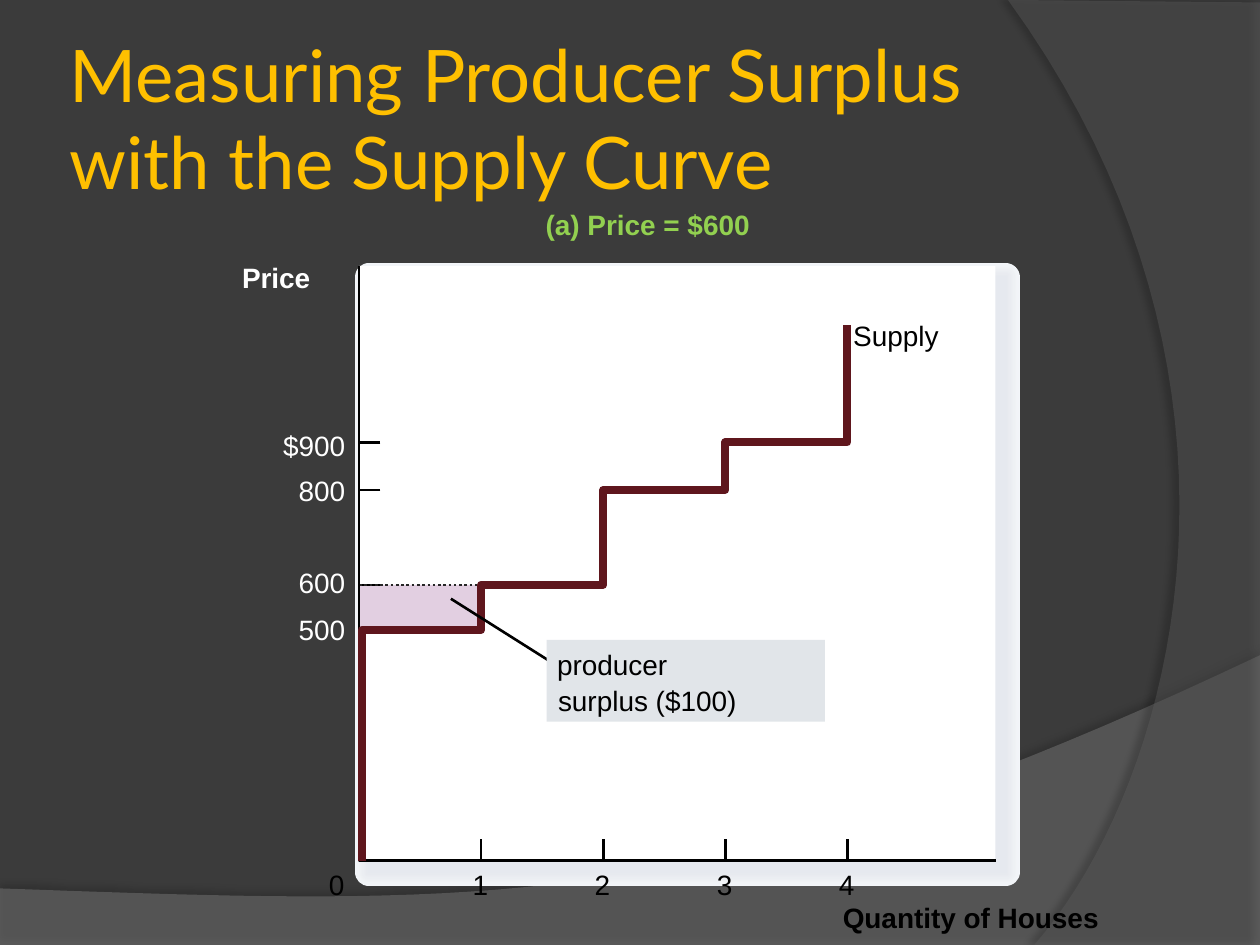
import pptx
import pptx.util
import pptx.dml.color
import pptx.enum.dml
import pptx.enum.shapes
import pptx.enum.text
import pptx.oxml
import pptx.oxml.ns
from lxml import etree

Cm, Pt = pptx.util.Cm, pptx.util.Pt
Align = pptx.enum.text.PP_ALIGN

COLORS = {
    "background": "3B3B3B", "title": "FFC000", "caption": "92D050",
    "light": "FFFFFF", "dark": "000000", "guide": "262626",
    "low_wave": "7F7F7F", "side_wave": "5E5E5E", "plot": "FFFFFF",
    "surplus": "E2CFE1", "supply": "5F161D", "callout": "E1E5E9",
}
FRAME_SHADES = ["F3F6F9", "F2F4F8", "F1F4F7", "F0F2F5", "EEF1F4", "EDEFF3",
                "EBEEF2", "EAECF1", "E9EBF0", "E7EAEF", "E6E9EF"]

TITLE = "Measuring Producer Surplus with the Supply Curve"
PRICES = [("500", 12.7, 12.34), ("600", 11.79, 11.4),
          ("800", 9.88, 9.55), ("$900", 8.92, 8.64)]
QUANTITIES = ["1", "2", "3", "4"]
LABELS = [
    ("Quantity of Houses", (16.99, 18.16, 5.23, 0.69), {"bold": True}),
    ("Price", (4.88, 5.26, 1.55, 0.69), {"bold": True, "color": "light"}),
    ("(a) Price = $600", (11, 4.19, 4.17, 0.69), {"bold": True, "color": "caption"}),
    ("0", (6.63, 17.48, 0.61, 0.81), {}),
    ("Supply", (17.2, 6.43, 2.08, 0.81), {}),
]
CALLOUT_LINES = [("producer", (11.23, 13.06, 2.26, 0.69)),
                 ("surplus ($100)", (11.25, 13.77, 4.06, 0.81))]

LEFT, TOP, WIDTH, HEIGHT = 7.24, 5.36, 12.83, 11.99
RIGHT, BOTTOM = LEFT + WIDTH, TOP + HEIGHT
STEP, TICK = 2.46, 0.43
SUPPLY_TOP = 6.55

deck = pptx.Presentation()
deck.slide_width, deck.slide_height = Cm(25.4), Cm(19.05)
slide = deck.slides.add_slide(deck.slide_layouts[5])


def rgb(name):
    return pptx.dml.color.RGBColor.from_string(COLORS.get(name, name))


def write(frame, text, size=16, font="Arial", color="dark", bold=False,
          align=Align.LEFT, margin=0, wrap=False):
    frame.word_wrap = wrap
    frame.auto_size = (pptx.enum.text.MSO_AUTO_SIZE.NONE if wrap
                       else pptx.enum.text.MSO_AUTO_SIZE.SHAPE_TO_FIT_TEXT)
    frame.margin_left = frame.margin_right = Cm(margin)
    frame.margin_top = frame.margin_bottom = Cm(margin)
    paragraph = frame.paragraphs[0]
    paragraph.alignment = align
    run = paragraph.add_run()
    run.text = text
    run.font.size, run.font.name, run.font.bold = Pt(size), font, bold
    run.font.color.rgb = rgb(color)


def label(text, box, **style):
    write(slide.shapes.add_textbox(*map(Cm, box)).text_frame, text, **style)


def paint(shape, fill=None, line=None, weight=1.5):
    shape.shadow.inherit = False
    if fill:
        shape.fill.solid()
        shape.fill.fore_color.rgb = rgb(fill)
    else:
        shape.fill.background()
    if line:
        shape.line.color.rgb = rgb(line)
        shape.line.width = Pt(weight)
    else:
        shape.line.fill.background()
    return shape


def block(box, **style):
    rectangle = pptx.enum.shapes.MSO_SHAPE.RECTANGLE
    return paint(slide.shapes.add_shape(rectangle, *map(Cm, box)), **style)


def outline(points, closed=False, **style):
    places = [(Cm(x), Cm(y)) for x, y in points]
    builder = slide.shapes.build_freeform(*places[0], scale=1.0)
    builder.add_line_segments(places[1:], close=closed)
    return paint(builder.convert_to_shape(), **style)


def rule(x1, y1, x2, y2, color="dark", dash=None):
    straight = pptx.enum.shapes.MSO_CONNECTOR.STRAIGHT
    line = slide.shapes.add_connector(straight, *map(Cm, (x1, y1, x2, y2)))
    line.line.color.rgb = rgb(color)
    line.line.width = Pt(1.5)
    if dash:
        line.line.dash_style = dash
    etree.SubElement(line._element.spPr, pptx.oxml.ns.qn("a:effectLst"))


def curve(a, b, c, d, steps=40):
    for t in (i / steps for i in range(steps + 1)):
        u = 1 - t
        yield tuple(u**3 * p + 3 * u * u * t * q + 3 * u * t * t * r + t**3 * s
                    for p, q, r, s in zip(a, b, c, d))


def wave(points, color, opacity, shade, distance, direction):
    shape = outline(points, closed=True, fill=color)
    properties = shape._element.spPr
    tint = properties.find(".//" + pptx.oxml.ns.qn("a:srgbClr"))
    etree.SubElement(tint, pptx.oxml.ns.qn("a:alpha"), val=str(opacity * 1000))
    effects = properties.find(pptx.oxml.ns.qn("a:effectLst"))
    effects.append(pptx.oxml.parse_xml(
        f'<a:outerShdw {pptx.oxml.ns.nsdecls("a")} blurRad="{Pt(4)}" '
        f'dist="{Pt(distance)}" dir="{direction * 60000}" rotWithShape="0">'
        f'<a:srgbClr val="{COLORS["dark"]}"><a:alpha val="{shade * 1000}"/>'
        f'</a:srgbClr></a:outerShdw>'))


slide.background.fill.solid()
slide.background.fill.fore_color.rgb = rgb("background")

low_edge = curve((25.4, 13.21), (14.2, 18.52), (9.93, 18.26), (0, 17.91))
side_edge = curve((20.85, 19.05), (23.75, 15.72), (25.86, 7.62), (20.32, 0))
wave([(0, 19.05), (25.4, 19.05), *low_edge], "low_wave", 45, 35, 3.5, 270)
wave([(25.4, 0.05), (25.4, 19.05), *side_edge], "side_wave", 40, 45, 4, 180)

title = slide.shapes.title
title.left, title.top, title.width, title.height = map(Cm, (1.27, 0.76, 20.75, 3.18))
title.text_frame.vertical_anchor = pptx.enum.text.MSO_ANCHOR.MIDDLE
write(title.text_frame, TITLE, size=41.4, font="Lato", color="title",
      margin=0.13, wrap=True)

for i, shade in enumerate(FRAME_SHADES):
    block((LEFT + 0.2, TOP + 0.23, WIDTH, HEIGHT), fill=shade, line=shade,
          weight=1.5 * (len(FRAME_SHADES) - i))
block((LEFT, TOP, WIDTH, HEIGHT), fill="plot")

levels = [level for _, level, _ in PRICES]
block((LEFT, levels[1], STEP, levels[0] - levels[1]), fill="surplus")

for price, level, label_top in PRICES:
    rule(LEFT + TICK, level, LEFT, level)
    width = 1.27 if price.startswith("$") else 0.94
    label(price, (6.96 - width, label_top, width, 0.69),
          color="light", align=Align.RIGHT)
for i, quantity in enumerate(QUANTITIES, 1):
    x = LEFT + STEP * i
    rule(x, BOTTOM - TICK, x, BOTTOM)
    label(quantity, (x - 0.17, 17.48, 0.61, 0.81))

rule(LEFT, levels[1], LEFT + STEP, levels[1], color="guide",
     dash=pptx.enum.dml.MSO_LINE.ROUND_DOT)
outline([(LEFT, TOP), (LEFT, BOTTOM), (RIGHT, BOTTOM)], line="dark")

stairs = [(LEFT + 0.05, BOTTOM), (LEFT + 0.05, levels[0])]
for i, level in enumerate(levels[1:] + [SUPPLY_TOP], 1):
    stairs += [(LEFT + STEP * i, stairs[-1][1]), (LEFT + STEP * i, level)]
outline(stairs, line="supply", weight=4.5)

for text, box, style in LABELS:
    label(text, box, **style)

rule(9.09, 12.07, 11.18, 13.39)
block((11.02, 12.9, 5.61, 1.65), fill="callout")
for text, box in CALLOUT_LINES:
    label(text, box)

deck.save("out.pptx")
